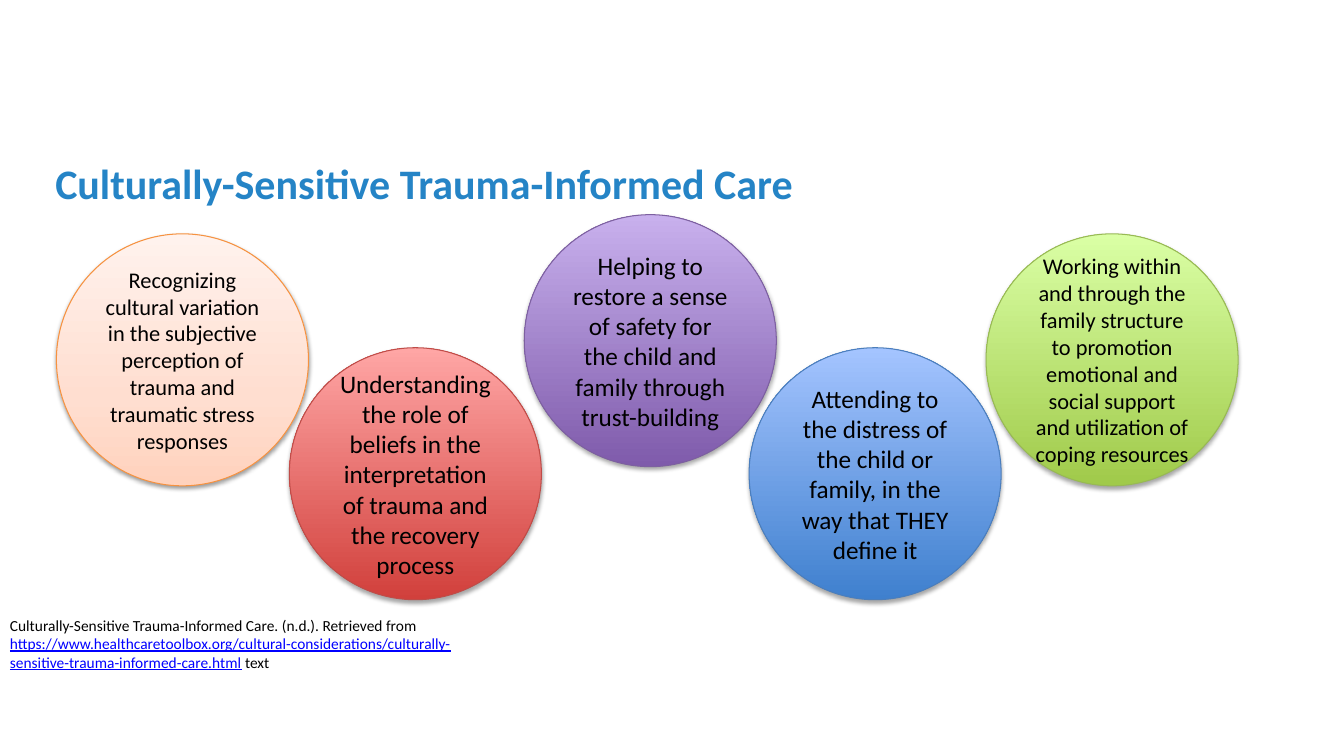
"""Builds the slide on culturally-sensitive trauma-informed care."""
from lxml.etree import SubElement
from pptx import Presentation
from pptx.dml.color import RGBColor
from pptx.enum.shapes import MSO_SHAPE as Shape
from pptx.enum.text import MSO_ANCHOR as Anchor, PP_ALIGN as Align
from pptx.oxml.ns import qn
from pptx.util import Inches, Pt

THEME = {
    "font": "Calibri",
    "title": {"size": 30, "color": "2584C6", "bold": True},
    "source": {"size": 11, "color": "000000"},
    "link": {"size": 11, "color": "0000FF", "underline": True},
    "roomy": {"size": 18, "color": "000000"},
    "dense": {"size": 16, "color": "000000"},
    "peach": {"stops": {0: "FFD2BD", 35: "FFDED0", 100: "FFF2ED"}, "line": "F69240", "shade": 38, "drop": 1.6},
    "blue": {"stops": {0: "3F80CE", 100: "A4C4FF"}, "line": "4B7EBC", "shade": 35, "drop": 1.8},
    "red": {"stops": {0: "D1403C", 100: "FFA6A5"}, "line": "BF4C48", "shade": 35, "drop": 1.8},
    "green": {"stops": {0: "A0CA4A", 100: "DAFFA5"}, "line": "98B955", "shade": 35, "drop": 1.8},
    "purple": {"stops": {0: "7F5BAB", 100: "C8B0ED"}, "line": "7D60A0", "shade": 35, "drop": 1.8},
    "blur": 3.1,
    "outline": 0.75,
}
SLIDE = (13.33, 7.5)
DIAMETER = 2.5
COLUMNS = (0.56, 2.87, 5.2, 7.43, 9.78)
ROWS = {"top": 2.13, "upper": 2.32, "lower": 3.45}

TITLE = [("Culturally-Sensitive Trauma-Informed Care", "title")]
PRACTICES = [
    (0, "upper", "peach", "dense",
     "Recognizing cultural variation in the subjective perception of trauma and traumatic stress responses"),
    (3, "lower", "blue", "roomy",
     "Attending to the distress of the child or family, in the way that THEY define it"),
    (1, "lower", "red", "roomy",
     "Understanding the role of beliefs in the interpretation of trauma and the recovery process"),
    (4, "upper", "green", "dense",
     "Working within and through the family structure to promotion emotional and social support "
     "and utilization of coping resources"),
    (2, "top", "purple", "roomy",
     "Helping to restore a sense of safety for the child and family through trust-building"),
]
SOURCE = [
    ("Culturally-Sensitive Trauma-Informed Care. (n.d.). Retrieved from ", "source"),
    ("https://www.healthcaretoolbox.org/cultural-considerations/culturally-sensitive-trauma-informed-care.html",
     "link"),
    (" text", "source"),
]


def write(shape, pieces, anchor, align=Align.LEFT):
    frame = shape.text_frame
    frame.word_wrap = True
    frame.vertical_anchor = anchor
    paragraph = frame.paragraphs[0]
    paragraph.alignment = align
    for words, style in pieces:
        run = paragraph.add_run()
        run.text = words
        look = dict(THEME[style], name=THEME["font"])
        run.font.color.rgb = RGBColor.from_string(look.pop("color"))
        look["size"] = Pt(look["size"])
        for key, value in look.items():
            setattr(run.font, key, value)


def add_color(parent, color):
    return SubElement(parent, qn("a:srgbClr"), val=color)


def paint(circle, look):
    circle.fill.gradient()
    circle.fill.gradient_angle = 90
    circle.line.color.rgb = RGBColor.from_string(look["line"])
    circle.line.width = Pt(THEME["outline"])
    circle.shadow.inherit = False
    properties = circle.element.spPr
    stops = properties.find(".//" + qn("a:gsLst"))
    stops.clear()
    for share, color in look["stops"].items():
        add_color(SubElement(stops, qn("a:gs"), pos=str(share * 1000)), color)
    shadow = SubElement(properties.find(qn("a:effectLst")), qn("a:outerShdw"),
                        blurRad=str(Pt(THEME["blur"])), dist=str(Pt(look["drop"])),
                        dir="5400000", rotWithShape="0")
    SubElement(add_color(shadow, "000000"), qn("a:alpha"), val=str(look["shade"] * 1000))


def main():
    deck = Presentation()
    deck.slide_width, deck.slide_height = map(Inches, SLIDE)
    shapes = deck.slides.add_slide(deck.slide_layouts[6]).shapes

    write(shapes.add_textbox(*map(Inches, (0.45, 1.57, 12, 0.49))), TITLE, Anchor.MIDDLE)
    for column, row, hue, style, practice in PRACTICES:
        place = (COLUMNS[column], ROWS[row], DIAMETER, DIAMETER)
        circle = shapes.add_shape(Shape.OVAL, *map(Inches, place))
        paint(circle, THEME[hue])
        write(circle, [(practice, style)], Anchor.MIDDLE, Align.CENTER)
    write(shapes.add_textbox(*map(Inches, (0, 6.06, 4.8, 0.66))), SOURCE, Anchor.TOP)

    deck.save("out.pptx")


if __name__ == "__main__":
    main()
